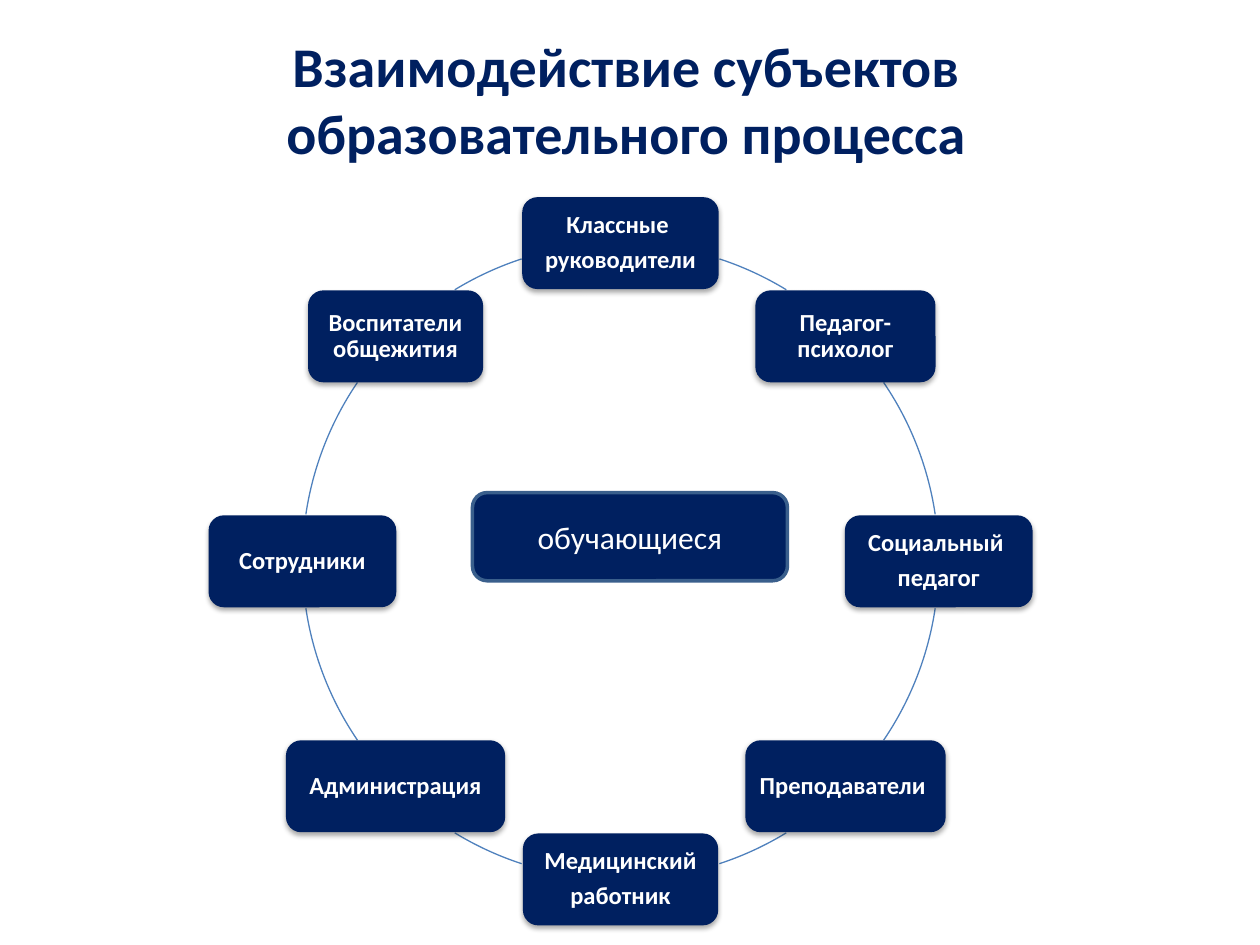
from math import cos, radians, sin

from lxml import etree
from pptx import Presentation
from pptx.dml.color import RGBColor
from pptx.enum.shapes import MSO_SHAPE
from pptx.enum.text import MSO_ANCHOR, PP_ALIGN
from pptx.oxml.ns import qn
from pptx.util import Inches, Pt

ROUND, ARC = MSO_SHAPE.ROUNDED_RECTANGLE, MSO_SHAPE.ARC
MIDDLE, CENTER = MSO_ANCHOR.MIDDLE, PP_ALIGN.CENTER
NAVY, WHITE, BLUE, STEEL = "002060", "FFFFFF", "4F81BD", "3A5F8C"
NODES = [
    ("Классные \nруководители", 1.56),
    ("Педагог-психолог", 1.43),
    ("Социальный \nпедагог", 1.49),
    ("Преподаватели ", 1.59),
    ("Медицинский\nработник", 1.55),
    ("Администрация", 1.74),
    ("Сотрудники", 1.49),
    ("Воспитатели общежития", 1.39),
]
HIGH = 0.73
GAPS = [(8.5, 34.2), (58.6, 71.9)]


def color(code):
    """Turn a hex string into a colour."""
    return RGBColor.from_string(code)


def write(frame, text, size, ink=WHITE, bold=False, space=None, after=None, inset=None):
    """Fill a text frame with centred paragraphs, one for each line."""
    frame.word_wrap = True
    frame.vertical_anchor = MIDDLE
    if inset is not None:
        frame.margin_left = frame.margin_right = Inches(inset)
        frame.margin_top = frame.margin_bottom = Inches(inset)
    for i, line in enumerate(text.split("\n")):
        para = frame.add_paragraph() if i else frame.paragraphs[0]
        para.alignment = CENTER
        para.line_spacing = space
        para.space_after = after
        run = para.add_run()
        run.text = line
        run.font.name = "Calibri"
        run.font.size = Pt(size)
        run.font.bold = bold
        run.font.color.rgb = color(ink)


def draw(slide, kind, box, fill=None, line=None, width=0.75):
    """Add a preset shape with a plain fill and outline."""
    shape = slide.shapes.add_shape(kind, *map(Inches, box))
    shape.shadow.inherit = False
    if fill:
        shape.fill.solid()
        shape.fill.fore_color.rgb = color(fill)
    else:
        shape.fill.background()
    if line:
        shape.line.color.rgb = color(line)
        shape.line.width = Pt(width)
    else:
        shape.line.fill.background()
    return shape


def shade(shape):
    """Give a shape a soft shadow below it."""
    effects = shape.element.spPr.find(qn("a:effectLst"))
    outer = etree.SubElement(effects, qn("a:outerShdw"), blurRad=str(Pt(3.1)),
                             dist=str(Pt(1.8)), dir="5400000", rotWithShape="0")
    black = etree.SubElement(outer, qn("a:srgbClr"), val="000000")
    etree.SubElement(black, qn("a:alpha"), val="35000")


def head(slide, box):
    """Place and write the title."""
    title = slide.shapes.title
    title.left, title.top, title.width, title.height = map(Inches, box)
    write(title.text_frame, "Взаимодействие субъектов образовательного процесса",
          32, ink=NAVY, bold=True)


def ring(slide, box):
    """Draw the arcs and the nodes evenly round the circle in the box."""
    left, top, wide, tall = box
    for a, b in GAPS:
        for start, end in [(a, b), (180 - b, 180 - a),
                           (180 + a, 180 + b), (360 - b, 360 - a)]:
            arc = draw(slide, ARC, box, line=BLUE)
            arc.adjustments[0] = start * 0.6
            arc.adjustments[1] = end * 0.6
    for i, (text, width) in enumerate(NODES):
        turn = radians(360 / len(NODES) * i)
        x = left + wide / 2 * (1 + sin(turn))
        y = top + tall / 2 * (1 - cos(turn))
        node = draw(slide, ROUND, (x - width / 2, y - HIGH / 2, width, HIGH), NAVY)
        shade(node)
        write(node.text_frame, text, 14, bold=True, space=0.9, after=Pt(5), inset=0.06)


def core(slide, box):
    """Draw the box in the middle of the ring."""
    shape = draw(slide, ROUND, box, NAVY, STEEL, 2)
    write(shape.text_frame, "обучающиеся", 18)


def main():
    """Build and save the slide."""
    deck = Presentation()
    deck.slide_width, deck.slide_height = Inches(10), Inches(7.5)
    slide = deck.slides.add_slide(deck.slide_layouts[5])
    head(slide, (0.47, 0.16, 9, 1.25))
    ring(slide, (2.4, 1.93, 5.05, 5.05))
    core(slide, (3.75, 3.91, 2.5, 0.7))
    deck.save("out.pptx")


if __name__ == "__main__":
    main()
